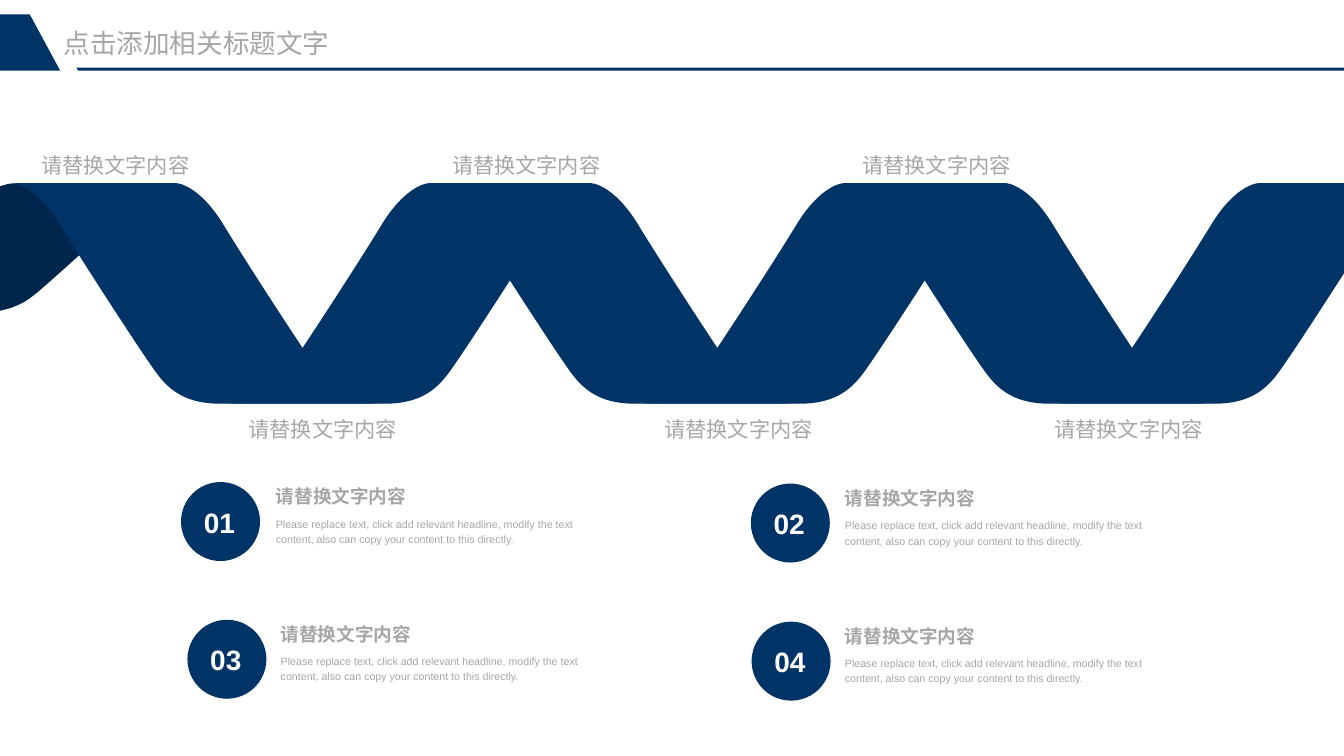
from dataclasses import dataclass

from lxml import etree
from pptx import Presentation
from pptx import util as u
from pptx.dml.color import RGBColor
from pptx.enum import shapes, text
from pptx.oxml.ns import qn


@dataclass(frozen=True)
class Theme:
    font: str = "Arial"
    navy: str = "003366"
    fold: str = "00264D"
    grey: str = "A6A6A6"
    white: str = "FFFFFF"
    title: float = 20
    label: float = 16
    heading: float = 14
    body: float = 8
    number: float = 21.1


THEME = Theme()
SLIDE_WIDTH, SLIDE_HEIGHT = 35.71, 20.09

PHRASE = "请替换文字内容"
DETAIL = ("Please replace text, click add relevant headline, modify the text "
          "content, also can copy your content to this directly.")

# Left edge of a falling strand: a start point, then three points per curve.
EDGE = [(0, 0),
        (0, 0), (0.58, 0.03), (1.23, 1.09),
        (1.83, 2.08), (3.48, 4.62), (3.79, 5.03),
        (4.16, 5.54), (4.62, 5.86), (5.51, 5.86)]
BAND, PITCH = 4.34, 5.51
RIBBON_LEFT, RIBBON_TOP = 0.36, 4.87
FOLD_STRETCH = 0.59

# Label left and top
LABELS = [(1.07, 3.91), (6.58, 10.92), (11.99, 3.91),
          (17.63, 10.92), (22.89, 3.91), (27.99, 10.92)]

# Number, disc left and top, text left and top
ITEMS = [("01", 4.81, 12.81, 7.33, 12.78),
         ("02", 19.95, 12.85, 22.45, 12.82),
         ("03", 4.98, 16.47, 7.46, 16.43),
         ("04", 19.97, 16.52, 22.45, 16.48)]


def paint(shape, color):
    shape.shadow.inherit = False
    shape.fill.solid()
    shape.fill.fore_color.rgb = RGBColor.from_string(color)
    shape.line.fill.background()


def add_outline(page, start, segments, color):
    """Add a closed shape; a segment holds one point (line) or three (Bezier curve)."""
    builder = page.shapes.build_freeform(u.Cm(start[0]), u.Cm(start[1]))
    builder.add_line_segments([(u.Cm(x), u.Cm(y)) for *_, (x, y) in segments], close=True)
    shape = builder.convert_to_shape()
    lines = list(shape.element.iter(qn("a:lnTo")))
    for line, segment in zip(lines, segments):
        if len(segment) == 3:
            curve = etree.Element(qn("a:cubicBezTo"))
            for x, y in segment:
                etree.SubElement(curve, qn("a:pt"), x=str(u.Cm(x) - shape.left),
                                 y=str(u.Cm(y) - shape.top))
            line.getparent().replace(line, curve)
    paint(shape, color)


def add_polygon(page, corners, color):
    add_outline(page, corners[0], [[corner] for corner in corners[1:]], color)


def add_strand(page, index, color=THEME.navy, stretch=1):
    """Add one ribbon strand; odd ones rise, even ones fall."""
    left, width = RIBBON_LEFT + index * PITCH, PITCH + BAND

    def place(x, y):
        return left + (width - x if index % 2 else x), RIBBON_TOP + y * stretch

    near = [place(x, y) for x, y in EDGE]
    far = [place(x + BAND, y) for x, y in reversed(EDGE)]
    curves = [[side[i:i + 3] for i in range(1, len(side), 3)] for side in (near, far)]
    add_outline(page, near[0], curves[0] + [[far[0]]] + curves[1], color)


def add_text(page, words, left, top, width, height, size, color=THEME.grey,
             bold=False, centred=False, wrap=True, spacing=1.2, padding=0):
    """Add a one-paragraph box; a padded box keeps its size and centres vertically."""
    box = page.shapes.add_textbox(u.Cm(left), u.Cm(top), u.Cm(width), u.Cm(height))
    frame = box.text_frame
    frame.text = words
    frame.word_wrap = wrap
    frame.margin_left = frame.margin_right = 0
    frame.margin_top = frame.margin_bottom = u.Cm(padding)
    if padding:
        frame.vertical_anchor = text.MSO_ANCHOR.MIDDLE
    else:
        frame.auto_size = text.MSO_AUTO_SIZE.SHAPE_TO_FIT_TEXT
    para = frame.paragraphs[0]
    para.line_spacing = spacing
    para.alignment = text.PP_ALIGN.CENTER if centred else text.PP_ALIGN.LEFT
    font = para.runs[0].font
    font.name, font.size, font.bold = THEME.font, u.Pt(size), bold
    font.color.rgb = RGBColor.from_string(color)


def add_item(page, number, disc_left, disc_top, text_left, text_top):
    add_text(page, PHRASE, text_left, text_top, 8.05, 0.66, THEME.heading, bold=True)
    add_text(page, DETAIL, text_left, text_top + 0.91, 8.05, 0.79, THEME.body)
    disc = page.shapes.add_shape(shapes.MSO_SHAPE.ROUNDED_RECTANGLE, u.Cm(disc_left),
                                 u.Cm(disc_top), u.Cm(2.1), u.Cm(2.1))
    disc.adjustments[0] = 0.5
    paint(disc, THEME.navy)
    add_text(page, number, disc_left + 0.17, disc_top + 0.27, 1.7, 1.4, THEME.number,
             THEME.white, bold=True, centred=True, padding=0.28)


def add_header(page):
    add_polygon(page, [(2.03, 1.8), (SLIDE_WIDTH, 1.8), (SLIDE_WIDTH, 1.88),
                       (2.08, 1.88)], THEME.navy)
    add_polygon(page, [(0.79, 0.38), (1.6, 1.88), (0, 1.88), (0, 0.38)], THEME.navy)
    add_text(page, "点击添加相关标题文字", 1.69, 0.71, 8.51, 0.86, THEME.title, spacing=1.0)


def main():
    deck = Presentation()
    deck.slide_width, deck.slide_height = u.Cm(SLIDE_WIDTH), u.Cm(SLIDE_HEIGHT)
    page = deck.slides.add_slide(deck.slide_layouts[6])
    add_strand(page, -1, THEME.fold, FOLD_STRETCH)
    for index in range(6):
        add_strand(page, index)
    for left, top in LABELS:
        add_text(page, PHRASE, left, top, 3.99, 0.76, THEME.label,
                 centred=True, wrap=False)
    for item in ITEMS:
        add_item(page, *item)
    add_header(page)
    deck.save("out.pptx")


if __name__ == "__main__":
    main()
